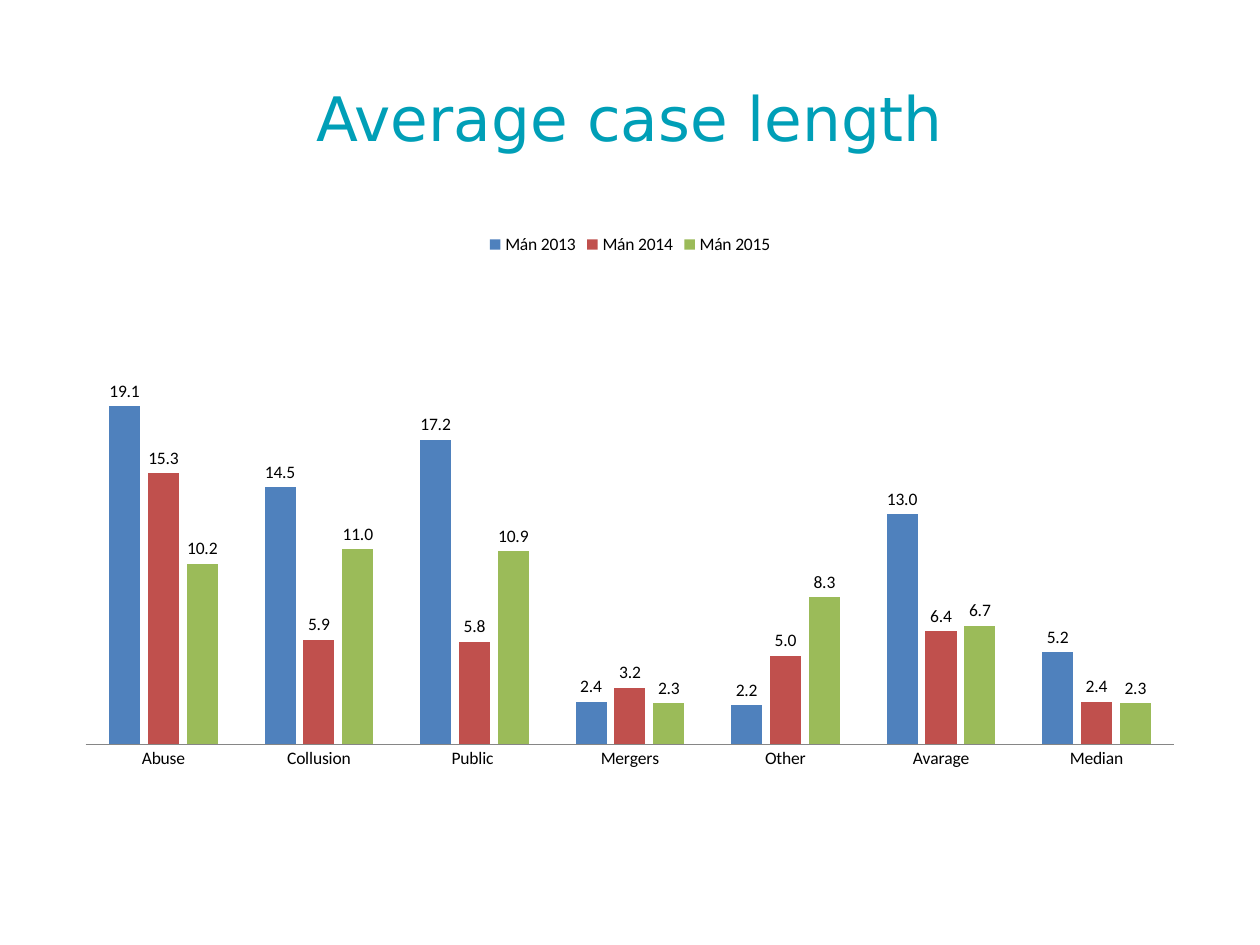
from lxml import etree
from pptx import Presentation
from pptx.chart.data import CategoryChartData
from pptx.dml.color import RGBColor
from pptx.enum.chart import (XL_CHART_TYPE, XL_LABEL_POSITION,
                             XL_LEGEND_POSITION, XL_TICK_MARK)
from pptx.enum.text import MSO_ANCHOR, PP_ALIGN
from pptx.oxml.ns import qn
from pptx.util import Inches, Pt

# Content
TITLE = "Average case length"
CATEGORIES = ["Abuse", "Collusion", "Public ", "Mergers", "Other", "Avarage", "Median"]
SERIES = {
    "Mán 2013": [19.1, 14.5, 17.2, 2.4, 2.2, 13, 5.2],
    "Mán 2014": [15.3, 5.9, 5.8, 3.2, 5, 6.4, 2.4],
    "Mán 2015": [10.2, 11, 10.9, 2.3, 8.3, 6.7, 2.3],
}

# Theme and layout
THEME = {
    "title": {"name": "DejaVu Sans", "size": Pt(35), "color": "009FB7"},
    "chart": {"name": "Calibri", "size": Pt(10), "color": "000000"},
    "series": ["4F81BD", "C0504D", "9BBB59"],
    "axis": "868686",
}
TITLE_BOX = (0.5, 0.3, 9, 1.25)
CHART_BOX = (0.5, 1.75, 9, 4.95)
PLOT = {"x": 0.02, "y": 0.13, "w": 0.96, "h": 0.71}


def set_font(font, style):
    for key, value in style.items():
        if key == "color":
            font.color.rgb = RGBColor.from_string(value)
        else:
            setattr(font, key, value)


def set_plot_area(chart, plot):
    """Fix the inner plot area as fractions of the chart."""
    area = chart._chartSpace.find(".//" + qn("c:plotArea"))
    for old in area.findall(qn("c:layout")):
        area.remove(old)
    layout = etree.Element(qn("c:layout"))
    manual = etree.SubElement(layout, qn("c:manualLayout"))
    values = {"layoutTarget": "inner", "xMode": "edge", "yMode": "edge", **plot}
    for tag, value in values.items():
        etree.SubElement(manual, qn("c:" + tag)).set("val", str(value))
    area.insert(0, layout)


def add_title(s):
    sp = s.shapes.title
    sp.left, sp.top, sp.width, sp.height = map(Inches, TITLE_BOX)
    tf = sp.text_frame
    tf.word_wrap = True
    tf.vertical_anchor = MSO_ANCHOR.MIDDLE
    p = tf.paragraphs[0]
    p.alignment = PP_ALIGN.CENTER
    r = p.add_run()
    r.text = TITLE
    set_font(r.font, THEME["title"])


def add_case_chart(s):
    data = CategoryChartData(number_format="0.0")
    data.categories = CATEGORIES
    for name, values in SERIES.items():
        data.add_series(name, values)
    chart = s.shapes.add_chart(XL_CHART_TYPE.COLUMN_CLUSTERED,
                               *map(Inches, CHART_BOX), data).chart
    chart.has_title = False
    set_font(chart.font, THEME["chart"])
    set_plot_area(chart, PLOT)

    # Legend
    chart.has_legend = True
    chart.legend.position = XL_LEGEND_POSITION.TOP
    chart.legend.include_in_layout = False

    # Axes
    cat, val = chart.category_axis, chart.value_axis
    cat.major_tick_mark = cat.minor_tick_mark = XL_TICK_MARK.NONE
    cat.format.line.color.rgb = RGBColor.from_string(THEME["axis"])
    cat.format.line.width = Pt(0.75)
    val.visible = val.has_major_gridlines = False
    val.minimum_scale, val.maximum_scale = 0, 25

    # Columns and value labels
    plot = chart.plots[0]
    plot.gap_width, plot.overlap = 150, -25
    plot.vary_by_categories = False
    for series, color in zip(plot.series, THEME["series"]):
        series.format.fill.solid()
        series.format.fill.fore_color.rgb = RGBColor.from_string(color)
        labels = series.data_labels
        labels.show_value = True
        labels.number_format = "0.0"
        labels.number_format_is_linked = False
        labels.position = XL_LABEL_POSITION.OUTSIDE_END


def main():
    prs = Presentation()
    prs.slide_width, prs.slide_height = Inches(10), Inches(7.5)
    s = prs.slides.add_slide(prs.slide_layouts[5])
    add_title(s)
    add_case_chart(s)
    prs.save("out.pptx")


if __name__ == "__main__":
    main()
